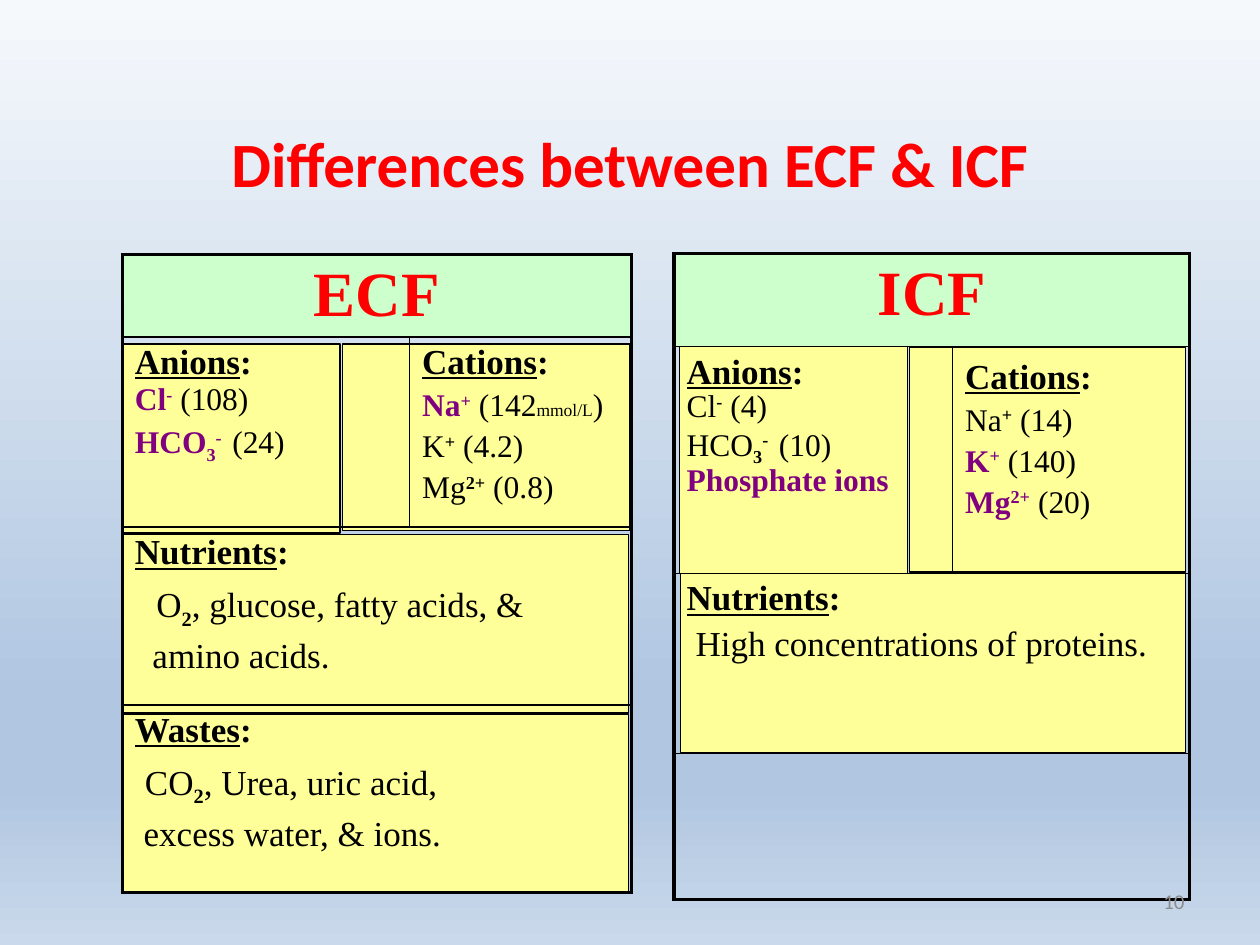
import pptx
import pptx.util
from lxml import etree
from pptx.dml.color import RGBColor
from pptx.enum.shapes import MSO_SHAPE
from pptx.enum.text import MSO_ANCHOR, PP_ALIGN
from pptx.oxml import parse_xml
from pptx.oxml.ns import qn
from pptx.util import Inches, Pt

RED = RGBColor(0xFF, 0x00, 0x00)
BLACK = RGBColor(0x00, 0x00, 0x00)
PURPLE = RGBColor(0x80, 0x00, 0x80)
GREEN = RGBColor(0xCC, 0xFF, 0xCC)
YELLOW = RGBColor(0xFF, 0xFF, 0x99)
GRAY = RGBColor(0x8C, 0x8C, 0x8C)
SKY = [(0, "F6F9FC"), (74, "B0C6E1"), (83, "B0C6E1"), (100, "CAD9EB")]
SERIF = "Times New Roman"
SUPER, SUB = 30, -25


def line(*spans, **layout):
    """A paragraph: (text, format) pairs and its layout."""
    return spans, layout


def heading(name):
    return line((name, dict(bold=True, underline=True)), (":", dict(bold=True)))


def ion(symbol, charge, *amount, sub="", strong=False, gap=18, spacing=1.0):
    """An ion with its concentration; strong marks the dominant ions."""
    color = PURPLE if strong else BLACK
    mark = dict(size=18, bold=True, color=color)
    spans = [(symbol, dict(size=18, bold=strong, color=color))]
    if sub:
        spans.append((sub, dict(mark, baseline=SUB)))
    spans += [(charge, dict(mark, baseline=SUPER)), (" ", dict(size=gap))]
    spans += [(text, dict(size=size)) for text, size in amount]
    return line(*spans, before=3.6, spacing=spacing)


def formula(start, rest, indent):
    return line((start, {}), ("2", dict(bold=True, baseline=SUB)), (rest, {}),
                before=8, indent=indent)


def plain(text, indent):
    return line((text, {}), before=4, indent=indent)


def compartment(name):
    return [line((name, dict(size=36, bold=True, color=RED)), align=PP_ALIGN.CENTER)]


ECF = dict(
    place=(0.97, 2.02), columns=[2.28, 1.76], rows=[0.59, 1.51, 1.41, 1.49],
    cells=[
        [compartment("ECF")],
        [[heading("Anions"),
          ion("Cl", "-", ("(108)", 18), strong=True, spacing=0.8),
          ion("HCO", "-", ("(24)", 18), sub="3", strong=True, gap=24, spacing=0.8)],
         [heading("Cations"),
          ion("Na", "+", ("(142", 18), ("mmol/L", 10), (")", 18), strong=True),
          ion("K", "+", ("(4.2)", 18)),
          ion("Mg", "2+", ("(0.8)", 18))]],
        [[heading("Nutrients"),
          formula("O", ", glucose, fatty acids, &", 0.17),
          plain("amino acids.", 0.14)]],
        [[heading("Wastes"),
          formula("CO", ", Urea, uric acid,", 0.08),
          plain("excess water, & ions.", 0.07)]],
    ])
ICF = dict(
    place=(5.35, 2.01), columns=[2.21, 1.88], rows=[0.74, 1.8, 1.43, 1.16],
    cells=[
        [compartment("ICF")],
        [[heading("Anions"),
          ion("Cl", "-", ("(4)", 18), spacing=0.7),
          ion("HCO", "-", ("(10)", 18), sub="3", gap=24, spacing=0.7),
          line(("Phosphate ions", dict(size=18, bold=True, color=PURPLE)),
               before=3.6, spacing=0.8)],
         [heading("Cations"),
          ion("Na", "+", ("(14)", 18)),
          ion("K", "+", ("(140)", 18), strong=True),
          ion("Mg", "2+", ("(20)", 18), strong=True)]],
        [[heading("Nutrients"), plain("High concentrations of proteins.", 0.07)]],
        [[]],
    ])
ICF_CATIONS_TOP = 0.09

PANELS = [
    (0.97, 5.67, 4.02, 1.42), (5.4, 4.55, 4.01, 1.42), (0.97, 4.24, 4.02, 1.42),
    (7.22, 2.76, 2.19, 1.78), (2.72, 2.73, 2.28, 1.48), (5.39, 2.74, 1.81, 1.81),
    (0.97, 2.73, 1.73, 1.5),
]


def add_span(para, text, font=SERIF, size=20, color=BLACK, bold=False,
             underline=False, baseline=0):
    span = para.add_run()
    span.text = text
    span.font.name = font
    span.font.size = Pt(size)
    span.font.color.rgb = color
    span.font.bold = bold
    span.font.underline = underline
    if baseline:
        span.font._element.set("baseline", str(baseline * 1000))


def fill_frame(frame, lines):
    for number, (spans, layout) in enumerate(lines):
        para = frame.add_paragraph() if number else frame.paragraphs[0]
        para.alignment = layout.get("align", PP_ALIGN.LEFT)
        para.line_spacing = layout.get("spacing", 1.0)
        para.space_before = Pt(layout.get("before", 0))
        if "indent" in layout:
            para._p.get_or_add_pPr().set("marL", str(Inches(layout["indent"])))
        for text, style in spans:
            add_span(para, text, **style)


def set_borders(cell, widths):
    """Draw black edges; widths are points for left, right, top, bottom."""
    properties = cell._tc.get_or_add_tcPr()
    for position, (side, width) in enumerate(zip("LRTB", widths)):
        edge = etree.Element(qn("a:ln" + side), w=str(Pt(width)))
        solid = etree.SubElement(edge, qn("a:solidFill"))
        etree.SubElement(solid, qn("a:srgbClr"), val=str(BLACK))
        properties.insert(position, edge)


def add_fluid_table(page, place, columns, rows, cells):
    left, top = place
    table = page.shapes.add_table(
        len(rows), len(columns), Inches(left), Inches(top),
        Inches(sum(columns)), Inches(sum(rows))).table
    table.first_row = table.horz_banding = False
    for column, width in zip(table.columns, columns):
        column.width = Inches(width)
    for row, height in zip(table.rows, rows):
        row.height = Inches(height)
    last_row, last_column = len(rows) - 1, len(columns) - 1
    for r, contents in enumerate(cells):
        for c in range(len(columns)):
            cell = table.cell(r, c)
            if r == 0:
                cell.fill.solid()
                cell.fill.fore_color.rgb = GREEN
            else:
                cell.fill.background()
            merged = len(contents) == 1
            outer = (merged or c == 0, merged or c == last_column,
                     r == 0, r == last_row)
            set_borders(cell, [2.25 if edge else 1 for edge in outer])
        if merged:
            table.cell(r, 0).merge(table.cell(r, last_column))
        for c, lines in enumerate(contents):
            fill_frame(table.cell(r, c).text_frame, lines)
    return table


def paint_background(page):
    page.background.fill.gradient()
    gradient = page.background._cSld.find(".//" + qn("a:gradFill"))
    stops = "".join(f'<a:gs pos="{pos * 1000}"><a:srgbClr val="{color}"/></a:gs>'
                    for pos, color in SKY)
    gradient.getparent().replace(gradient, parse_xml(
        '<a:gradFill xmlns:a="http://schemas.openxmlformats.org/drawingml/2006/main"'
        f' rotWithShape="1"><a:gsLst>{stops}</a:gsLst>'
        '<a:lin ang="5400000" scaled="0"/></a:gradFill>'))


def main():
    deck = pptx.Presentation()
    deck.slide_width, deck.slide_height = Inches(10), Inches(7.5)
    page = deck.slides.add_slide(deck.slide_layouts[5])
    paint_background(page)

    title = page.shapes.title
    title.left, title.top = Inches(0.5), Inches(0.9)
    title.width, title.height = Inches(9), Inches(0.78)
    title.text_frame.vertical_anchor = MSO_ANCHOR.MIDDLE
    fill_frame(title.text_frame, [line(
        ("Differences between ECF & ICF",
         dict(font="Calibri", size=36, color=RED, bold=True)),
        align=PP_ALIGN.CENTER)])

    for place in PANELS:
        panel = page.shapes.add_shape(MSO_SHAPE.RECTANGLE, *map(Inches, place))
        panel.shadow.inherit = False
        panel.fill.solid()
        panel.fill.fore_color.rgb = YELLOW
        panel.line.color.rgb = BLACK
        panel.line.width = Pt(0.75)

    add_fluid_table(page, **ECF)
    icf_table = add_fluid_table(page, **ICF)
    icf_table.cell(1, 1).margin_top = Inches(ICF_CATIONS_TOP)

    box = page.shapes.add_textbox(Inches(7.17), Inches(6.95), Inches(2.33), Inches(0.4))
    box.text_frame.word_wrap = True
    box.text_frame.vertical_anchor = MSO_ANCHOR.MIDDLE
    fill_frame(box.text_frame, [line(
        ("10", dict(font="Calibri", size=12, color=GRAY)), align=PP_ALIGN.RIGHT)])
    deck.save("out.pptx")


if __name__ == "__main__":
    main()
